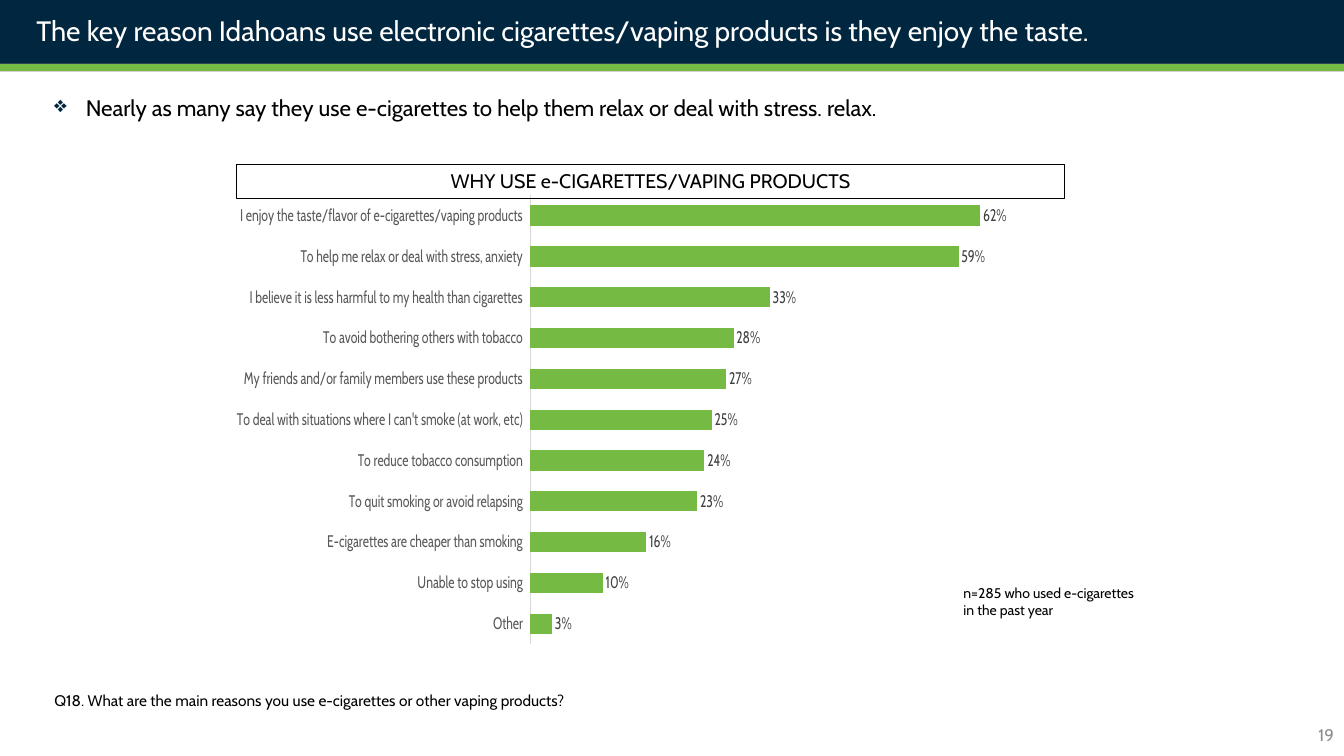
from lxml import etree
from pptx import Presentation
from pptx.chart.data import CategoryChartData
from pptx.dml.color import RGBColor
from pptx.enum.chart import XL_CHART_TYPE, XL_LABEL_POSITION, XL_TICK_LABEL_POSITION, XL_TICK_MARK
from pptx.enum.shapes import MSO_CONNECTOR, MSO_SHAPE
from pptx.enum.text import MSO_ANCHOR, MSO_AUTO_SIZE, PP_ALIGN
from pptx.oxml.ns import qn
from pptx.util import Pt

BAR_CLUSTERED = XL_CHART_TYPE.BAR_CLUSTERED
OUTSIDE_END = XL_LABEL_POSITION.OUTSIDE_END
LABELS_LOW = XL_TICK_LABEL_POSITION.LOW
NO_TICK = XL_TICK_MARK.NONE
STRAIGHT = MSO_CONNECTOR.STRAIGHT
RECTANGLE = MSO_SHAPE.RECTANGLE
TOP, MIDDLE = MSO_ANCHOR.TOP, MSO_ANCHOR.MIDDLE
NO_AUTOSIZE = MSO_AUTO_SIZE.NONE
LEFT, CENTER, RIGHT = PP_ALIGN.LEFT, PP_ALIGN.CENTER, PP_ALIGN.RIGHT

SLIDE_WIDTH, SLIDE_HEIGHT = 960, 540
NAVY, GREEN, GRAY = "00273F", "75BA43", "808080"
BLACK, WHITE = "000000", "FFFFFF"

REASONS = [
    ("Other", 0.03),
    ("Unable to stop using", 0.10),
    ("E-cigarettes are cheaper than smoking", 0.16),
    ("To quit smoking or avoid relapsing", 0.23),
    ("To reduce tobacco consumption", 0.24),
    ("To deal with situations where I can't smoke (at work, etc)", 0.25),
    ("My friends and/or family members use these products", 0.27),
    ("To avoid bothering others with tobacco", 0.28),
    ("I believe it is less harmful to my health than cigarettes", 0.33),
    ("To help me relax or deal with stress, anxiety", 0.59),
    ("I enjoy the taste/flavor of e-cigarettes/vaping products", 0.62),
]


def rgb(color):
    return RGBColor.from_string(color)


def style_font(font, size, color, family):
    font.size = Pt(size)
    font.name = family
    font.color.rgb = rgb(color)


def write(frame, text, *, family, size, color=BLACK, align=LEFT, anchor=TOP, bullet=None):
    frame.word_wrap = True
    frame.auto_size = NO_AUTOSIZE
    frame.vertical_anchor = anchor
    frame.margin_left = frame.margin_right = Pt(7.2)
    frame.margin_top = frame.margin_bottom = Pt(3.6)
    paragraph = frame.paragraphs[0]
    paragraph.alignment = align
    if bullet:
        properties = paragraph._p.get_or_add_pPr()
        properties.set("marL", str(Pt(22.5)))
        properties.set("indent", str(-Pt(22.5)))
        bullet_color = etree.SubElement(properties, qn("a:buClr"))
        etree.SubElement(bullet_color, qn("a:srgbClr"), val=NAVY)
        etree.SubElement(properties, qn("a:buChar"), char=bullet)
    run = paragraph.add_run()
    run.text = text
    style_font(run.font, size, color, family)


class SlideBuilder:
    def __init__(self, presentation, family):
        self.family = family
        self.slide = presentation.slides.add_slide(presentation.slide_layouts[5])
        self.shapes = self.slide.shapes

    def title(self, text, box, **style):
        heading = self.shapes.title
        heading.left, heading.top, heading.width, heading.height = map(Pt, box)
        write(heading.text_frame, text, family=self.family, **style)
        self.shapes._spTree.append(heading._element)

    def text(self, text, box, **style):
        textbox = self.shapes.add_textbox(*map(Pt, box))
        write(textbox.text_frame, text, family=self.family, **style)

    def rectangle(self, box, fill=None, line=None, text=None, **style):
        panel = self.shapes.add_shape(RECTANGLE, *map(Pt, box))
        panel.shadow.inherit = False
        if fill:
            panel.fill.solid()
            panel.fill.fore_color.rgb = rgb(fill)
        else:
            panel.fill.background()
        if line:
            panel.line.color.rgb = rgb(line)
            panel.line.width = Pt(0.75)
        else:
            panel.line.fill.background()
        if text:
            write(panel.text_frame, text, family=self.family, **style)

    def line(self, start, end, color, width):
        rule = self.shapes.add_connector(STRAIGHT, *map(Pt, start + end))
        rule.line.color.rgb = rgb(color)
        rule.line.width = Pt(width)
        etree.SubElement(rule._element.spPr, qn("a:effectLst"))

    def bar_chart(self, box, rows, color, plot_area):
        data = CategoryChartData(number_format="0%")
        data.categories = [reason for reason, _ in rows]
        data.add_series("Series 1", [share for _, share in rows])
        chart = self.shapes.add_chart(BAR_CLUSTERED, *map(Pt, box), data).chart
        chart.has_legend = chart.has_title = False
        style_font(chart.font, 10, BLACK, self.family)

        reasons = chart.category_axis
        reasons.major_tick_mark = reasons.minor_tick_mark = NO_TICK
        reasons.tick_label_position = LABELS_LOW
        reasons.has_major_gridlines = False
        reasons.format.line.color.rgb = rgb("D9D9D9")
        reasons.format.line.width = Pt(0.75)
        style_font(reasons.tick_labels.font, 12, "595959", self.family)

        shares = chart.value_axis
        shares.minimum_scale, shares.maximum_scale = 0, 1
        shares.has_major_gridlines = False
        shares.visible = False

        bars = chart.plots[0]
        bars.gap_width = 100
        bars.vary_by_categories = False
        fill = bars.series[0].format.fill
        fill.solid()
        fill.fore_color.rgb = rgb(color)
        bars.has_data_labels = True
        labels = bars.data_labels
        labels.show_value = True
        labels.position = OUTSIDE_END
        labels.number_format = "0%"
        labels.number_format_is_linked = False
        style_font(labels.font, 12, "404040", self.family)
        self.place_plot(chart, plot_area)

    def place_plot(self, chart, plot_area):
        plot = chart._chartSpace.chart.plotArea
        for old_layout in plot.findall(qn("c:layout")):
            plot.remove(old_layout)
        layout = etree.Element(qn("c:layout"))
        plot.insert(0, layout)
        manual = etree.SubElement(layout, qn("c:manualLayout"))
        settings = [("layoutTarget", "inner"), ("xMode", "edge"), ("yMode", "edge")]
        settings += zip("xywh", plot_area)
        for tag, value in settings:
            etree.SubElement(manual, qn(f"c:{tag}"), val=str(value))


def main():
    presentation = Presentation()
    presentation.slide_width = Pt(SLIDE_WIDTH)
    presentation.slide_height = Pt(SLIDE_HEIGHT)
    page = SlideBuilder(presentation, "Cabin")

    page.rectangle((0, 0, SLIDE_WIDTH, 51), fill=GRAY)
    page.rectangle((0, 0, SLIDE_WIDTH, 45.5), fill=NAVY)
    page.title("The key reason Idahoans use electronic cigarettes/vaping products is they enjoy the taste.",
               (18.7, 5.8, 896.4, 31.7), size=20, color=WHITE)
    page.line((0, 48.2), (SLIDE_WIDTH, 48.2), GREEN, 4.5)
    page.text("Nearly as many say they use e-cigarettes to help them relax or deal with stress. relax.",
              (31.7, 63.5, 911.5, 28), size=16, bullet="❖")
    page.bar_chart((169.2, 129.6, 736.6, 339.8), REASONS, GREEN, (0.011, 0.029, 0.973, 0.944))
    page.rectangle((169.2, 117.4, 591.1, 24.5), line=BLACK, size=14, align=CENTER,
                   text="WHY USE e-CIGARETTES/VAPING PRODUCTS")
    page.text("n=285 who used e-cigarettes in the past year", (681.1, 414, 141.8, 31.7), size=10)
    page.text("Q18. What are the main reasons you use e-cigarettes or other vaping products?",
              (31.7, 490.3, 755.3, 20.9), size=11)
    page.text("19", (744, 510.5, 216, 28.8), size=12, color="8C8C8C", align=RIGHT, anchor=MIDDLE)

    presentation.save("out.pptx")


if __name__ == "__main__":
    main()
